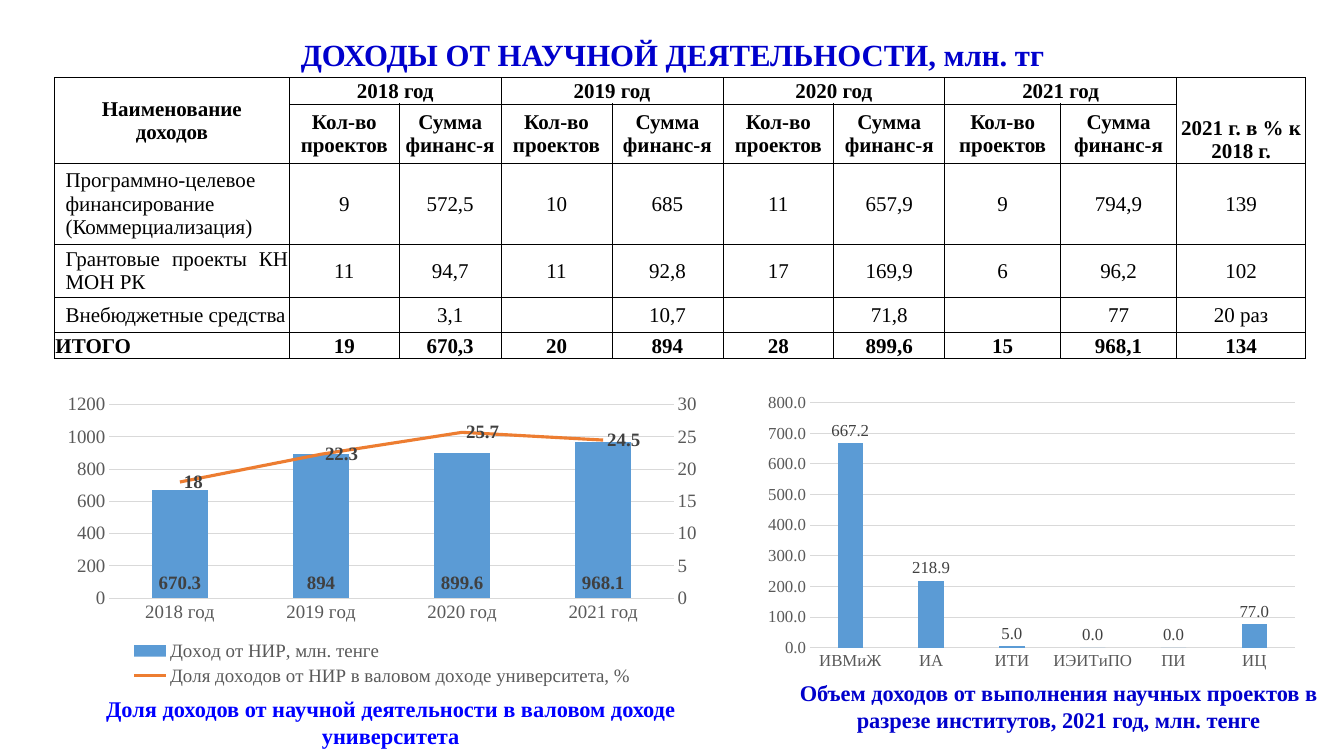
from copy import deepcopy

from lxml import etree
from pptx import Presentation
from pptx.chart.data import CategoryChartData
from pptx.dml.color import RGBColor
from pptx.enum.chart import XL_CHART_TYPE, XL_LABEL_POSITION, XL_LEGEND_POSITION, XL_TICK_MARK
from pptx.enum.text import MSO_ANCHOR, PP_ALIGN
from pptx.oxml.ns import qn
from pptx.util import Pt

PX = 9144  # 100 px to the inch
FONT = "Times New Roman"
COLORS = {"title": "0000CC", "caption": "0000FF", "black": "000000", "axis": "595959",
          "grid": "D9D9D9", "label": "404040", "bar": "5B9BD5", "share": "ED7D31"}
CENTER, JUSTIFY = PP_ALIGN.CENTER, PP_ALIGN.JUSTIFY
MIDDLE, BOTTOM = MSO_ANCHOR.MIDDLE, MSO_ANCHOR.BOTTOM
COLUMN = XL_CHART_TYPE.COLUMN_CLUSTERED
NO_TICK = XL_TICK_MARK.NONE
OUTSIDE_END, INSIDE_BASE, RIGHT = (XL_LABEL_POSITION.OUTSIDE_END, XL_LABEL_POSITION.INSIDE_BASE,
                                   XL_LABEL_POSITION.RIGHT)
LEGEND_BOTTOM = XL_LEGEND_POSITION.BOTTOM

YEARS = ["2018 год", "2019 год", "2020 год", "2021 год"]
COL_WIDTHS = [233, 109, 101, 110, 110, 110, 110, 115, 115, 128]
ROW_HEIGHTS = [26, 59, 80, 53, 35, 26]
INCOME_ROWS = [
    ["Программно-целевое финансирование (Коммерциализация)",
     "9", "572,5", "10", "685", "11", "657,9", "9", "794,9", "139"],
    ["Грантовые проекты КН МОН РК",
     "11", "94,7", "11", "92,8", "17", "169,9", "6", "96,2", "102"],
    ["Внебюджетные средства", "", "3,1", "", "10,7", "", "71,8", "", "77", "20 раз"],
    ["ИТОГО", "19", "670,3", "20", "894", "28", "899,6", "15", "968,1", "134"],
]


def rgb(name):
    return RGBColor.from_string(COLORS[name])


def style_font(font, size, color, bold=False):
    font.name, font.size, font.bold = FONT, Pt(size), bold
    font.color.rgb = rgb(color)


def write_text(tf, text, size=15, color="black", bold=False, align=CENTER, indent=0):
    """Fill the frame, one paragraph for each line of text."""
    tf.word_wrap = True
    for i, line in enumerate(text.split("\n")):
        p = tf.add_paragraph() if i else tf.paragraphs[0]
        p.alignment = align
        if indent:
            p._p.get_or_add_pPr().set("marL", str(indent * PX))
        r = p.add_run()
        r.text = line
        style_font(r.font, size, color, bold)


def add_title(slide, text, x, y, w, h):
    sp = slide.shapes.title
    sp.left, sp.top, sp.width, sp.height = (v * PX for v in (x, y, w, h))
    sp.text_frame.vertical_anchor = MIDDLE
    write_text(sp.text_frame, text, size=22, color="title", bold=True)


def add_caption(slide, text, x, y, w, h, color):
    sp = slide.shapes.add_textbox(*(v * PX for v in (x, y, w, h)))
    write_text(sp.text_frame, text, size=16, color=color, bold=True)


def add_borders(cell):
    tc_pr = cell._tc.get_or_add_tcPr()
    for i, side in enumerate(("lnL", "lnR", "lnT", "lnB")):
        ln = etree.Element(qn(f"a:{side}"), w=str(Pt(0.5)))
        fill = etree.SubElement(ln, qn("a:solidFill"))
        etree.SubElement(fill, qn("a:srgbClr"), val=COLORS["black"])
        tc_pr.insert(i, ln)


def add_income_table(slide, x, y):
    frame = slide.shapes.add_table(len(ROW_HEIGHTS), len(COL_WIDTHS), x * PX, y * PX,
                                   sum(COL_WIDTHS) * PX, sum(ROW_HEIGHTS) * PX)
    table = frame.table
    table.first_row = table.horz_banding = False
    for col, width in zip(table.columns, COL_WIDTHS):
        col.width = width * PX
    for row, height in zip(table.rows, ROW_HEIGHTS):
        row.height = height * PX

    last = len(COL_WIDTHS) - 1
    years = [text for year in YEARS for text in (year, "")]
    measures = ["Кол-во проектов", "Сумма финанс-я"] * len(YEARS)
    rows = [["Наименование\nдоходов", *years, "2021 г. в % к 2018 г."],
            ["", *measures, ""], *INCOME_ROWS]
    for c in (0, last):
        table.cell(0, c).merge(table.cell(1, c))
    for c in range(1, last, 2):
        table.cell(0, c).merge(table.cell(0, c + 1))

    for r, texts in enumerate(rows):
        header, total = r < 2, r == len(rows) - 1
        for c, text in enumerate(texts):
            cell = table.cell(r, c)
            cell.fill.background()
            add_borders(cell)
            cell.margin_left = cell.margin_right = cell.margin_top = PX
            cell.margin_bottom = 0
            cell.vertical_anchor = BOTTOM if header and c == last else MIDDLE
            if text:
                name = c == 0 and not header
                write_text(cell.text_frame, text, bold=header or total,
                           align=JUSTIFY if name else CENTER,
                           indent=10 if name and not total else 0)


def add_labels(series, size, position, number_format="General", bold=False):
    labels = series.data_labels
    labels.show_value = True
    labels.position = position
    labels.number_format, labels.number_format_is_linked = number_format, False
    style_font(labels.font, size, "label", bold)


def add_column_chart(slide, box, cats, series, size, gap, overlap, top, step,
                     number_format="General"):
    data = CategoryChartData()
    data.categories = cats
    for name, values in series:
        data.add_series(name, values)
    chart = slide.shapes.add_chart(COLUMN, *(v * PX for v in box), data).chart
    style_font(chart.font, size, "black")
    chart.has_title = chart.has_legend = False
    plot = chart.plots[0]
    plot.gap_width, plot.overlap, plot.vary_by_categories = gap, overlap, False
    bars = plot.series[0].format.fill
    bars.solid()
    bars.fore_color.rgb = rgb("bar")

    cat_axis, val_axis = chart.category_axis, chart.value_axis
    for axis in (cat_axis, val_axis):
        axis.major_tick_mark = axis.minor_tick_mark = NO_TICK
        style_font(axis.tick_labels.font, size, "axis")
    val_axis.format.line.fill.background()
    val_axis.minimum_scale, val_axis.maximum_scale, val_axis.major_unit = 0, top, step
    val_axis.tick_labels.number_format = number_format
    val_axis.tick_labels.number_format_is_linked = False
    for line in (cat_axis.format.line, val_axis.major_gridlines.format.line):
        line.color.rgb, line.width = rgb("grid"), Pt(0.75)
    return chart


def set_values(parent, **values):
    for tag, value in values.items():
        parent.find(f".//{qn('c:' + tag)}").set("val", str(value))


def remove_children(parent, tag):
    for child in parent.findall(qn(tag)):
        parent.remove(child)


def move_to_right_axis(chart, top, step):
    """Turn the second column series into a line read on a right axis."""
    bar = chart.plots[0]._element
    ser = bar.findall(qn("c:ser"))[1]
    remove_children(ser, "c:invertIfNegative")
    marker = etree.Element(qn("c:marker"))
    etree.SubElement(marker, qn("c:symbol"), val="none")
    ser.find(qn("c:spPr")).addnext(marker)
    etree.SubElement(ser, qn("c:smooth"), val="0")

    line = etree.Element(qn("c:lineChart"))
    etree.SubElement(line, qn("c:grouping"), val="standard")
    etree.SubElement(line, qn("c:varyColors"), val="0")
    line.append(ser)
    cat_id, val_id = "50010", "50020"
    for axis_id in (cat_id, val_id):
        etree.SubElement(line, qn("c:axId"), val=axis_id)
    bar.addnext(line)

    left_axis = chart.value_axis._element
    cat_axis, right_axis = deepcopy(chart.category_axis._element), deepcopy(left_axis)
    set_values(cat_axis, axId=cat_id, crossAx=val_id, delete=1)
    set_values(right_axis, axId=val_id, crossAx=cat_id, axPos="r", crosses="max",
               max=top, majorUnit=step)
    remove_children(right_axis, "c:majorGridlines")
    left_axis.addnext(right_axis)
    right_axis.addnext(cat_axis)


def add_income_share_chart(slide):
    series = [("Доход от НИР, млн. тенге", (670.3, 894, 899.6, 968.1)),
              ("Доля доходов от НИР в валовом доходе университета, %", (18, 22.3, 25.7, 24.5))]
    chart = add_column_chart(slide, (54, 385, 650, 300), YEARS, series, size=13.5,
                             gap=150, overlap=0, top=1200, step=200)
    income, share = chart.plots[0].series
    add_labels(income, 13.5, INSIDE_BASE, bold=True)
    add_labels(share, 13.5, RIGHT, bold=True)
    share.format.line.color.rgb, share.format.line.width = rgb("share"), Pt(2.25)
    move_to_right_axis(chart, top=30, step=5)
    chart.has_legend = True
    chart.legend.position, chart.legend.include_in_layout = LEGEND_BOTTOM, False
    style_font(chart.legend.font, 13.5, "axis")


def add_institutes_chart(slide):
    cats = ["ИВМиЖ", "ИА", "ИТИ", "ИЭИТиПО", "ПИ", "ИЦ"]
    chart = add_column_chart(slide, (751, 385, 544, 285), cats,
                             [("Series 1", (667.2, 218.9, 5, 0, 0, 77))], size=12,
                             gap=219, overlap=-27, top=800, step=100, number_format="0.0")
    add_labels(chart.plots[0].series[0], 12, OUTSIDE_END, "0.0")


def main():
    prs = Presentation()
    prs.slide_width, prs.slide_height = 1333 * PX, 750 * PX
    slide = prs.slides.add_slide(prs.slide_layouts[5])
    add_title(slide, "ДОХОДЫ ОТ НАУЧНОЙ ДЕЯТЕЛЬНОСТИ, млн. тг", 113, 30, 1108, 47)
    add_income_table(slide, 54, 77)
    add_institutes_chart(slide)
    add_caption(slide, "Объем доходов от выполнения научных проектов в разрезе институтов, "
                "2021 год, млн. тенге", 778, 669, 544, 64, "title")
    add_caption(slide, "Доля доходов от научной деятельности в валовом доходе университета",
                54, 685, 667, 64, "caption")
    add_income_share_chart(slide)
    prs.save("out.pptx")


if __name__ == "__main__":
    main()
